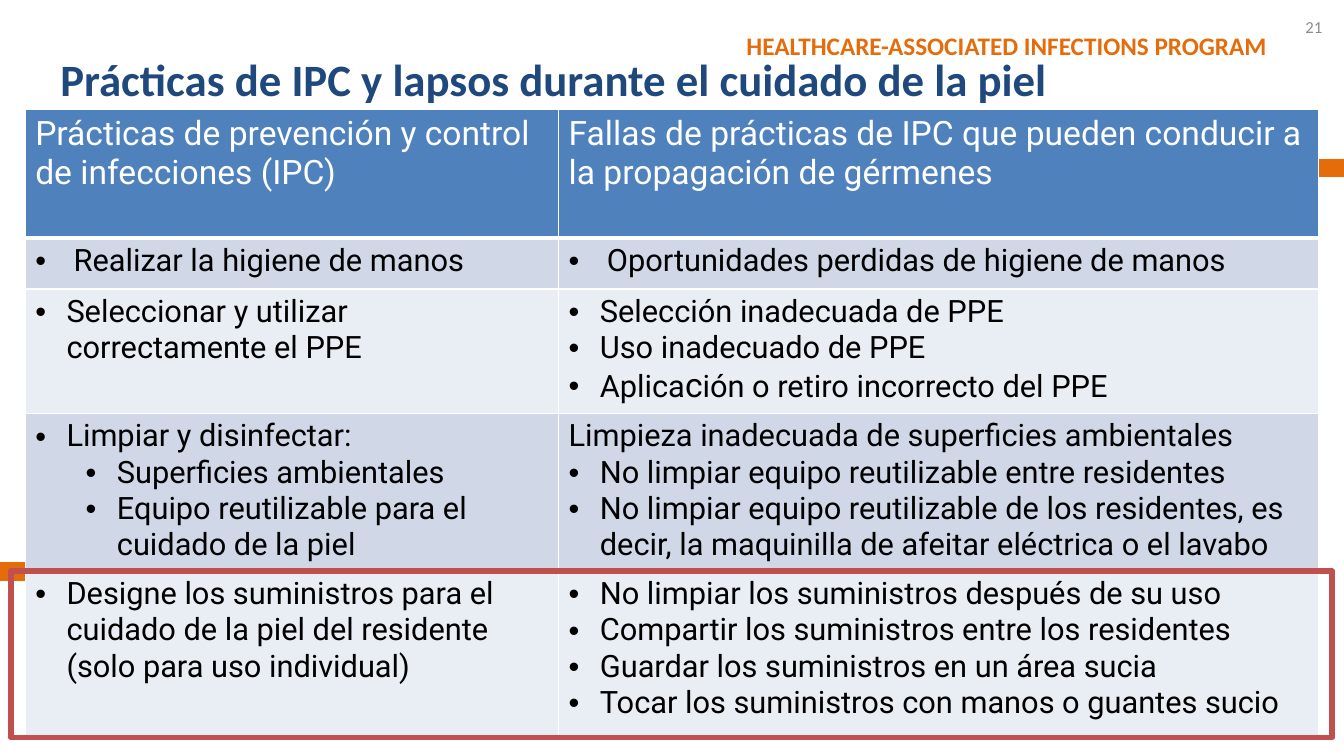
from lxml.etree import SubElement
from pptx import Presentation
from pptx.dml.color import RGBColor
from pptx.enum.shapes import MSO_CONNECTOR, MSO_SHAPE
from pptx.enum.text import MSO_ANCHOR, PP_ALIGN
from pptx.oxml.ns import qn
from pptx.util import Inches, Pt

THEME = {
    "heading_font": "Calibri", "table_font": "Roboto", "bullet_font": "Arial",
    "orange": "E46C0A", "navy": "1F497D", "gray": "8C8C8C", "red": "C0504D",
    "white": "FFFFFF", "black": "000000",
    "header_fill": "4F81BD", "bands": ("D0D8E8", "E9EDF4"),
    "title": 32, "program": 18, "number": 12, "header": 24, "body": 22,
    "bar": 13.5, "frame": 4, "border": 1, "header_border": 3,
}

presentation = Presentation()
presentation.slide_width, presentation.slide_height = Inches(13.33), Inches(7.5)
slide = presentation.slides.add_slide(presentation.slide_layouts[6])
COLUMN = presentation.slide_width / 160
ROW = presentation.slide_height / 90


def place(left, top, width, height):
    return [int(left * COLUMN), int(top * ROW), int(width * COLUMN), int(height * ROW)]


def add_run(paragraph, text, font, size, color, bold=False):
    run = paragraph.add_run()
    run.text = text
    run.font.name, run.font.size, run.font.bold = font, Pt(size), bold
    run.font.color.rgb = RGBColor.from_string(color)


for start, end, row in [(16, 0, 68), (160, 136, 20)]:
    bar = slide.shapes.add_connector(
        MSO_CONNECTOR.STRAIGHT,
        int(start * COLUMN), int(row * ROW), int(end * COLUMN), int(row * ROW))
    bar.line.color.rgb = RGBColor.from_string(THEME["orange"])
    bar.line.width = Pt(THEME["bar"])
    SubElement(bar._element.spPr, qn("a:effectLst"))

LABELS = [
    ("HEALTHCARE-ASSOCIATED INFECTIONS PROGRAM", (64, 3, 88, 5),
     "program", "orange", True, PP_ALIGN.RIGHT, MSO_ANCHOR.TOP),
    ("21", (149.3, 0.8, 9.3, 4.8),
     "number", "gray", False, PP_ALIGN.RIGHT, MSO_ANCHOR.MIDDLE),
    ("Prácticas de IPC y lapsos durante el cuidado de la piel", (6, 3.6, 129, 11.4),
     "title", "navy", True, PP_ALIGN.LEFT, MSO_ANCHOR.MIDDLE),
]
for text, area, size, color, bold, alignment, anchor in LABELS:
    frame = slide.shapes.add_textbox(*place(*area)).text_frame
    frame.word_wrap = True
    frame.vertical_anchor = anchor
    paragraph = frame.paragraphs[0]
    paragraph.alignment = alignment
    add_run(paragraph, text, THEME["heading_font"], THEME[size], THEME[color], bold)

INDENTS = {"wide": (0.38, 0.38, 0), "item": (0.31, 0.31, 0), "sub": (0.81, 0.31, 1)}
CONTENT = [
    [[("plain", "Prácticas de prevención y control de infecciones (IPC)")],
     [("plain", "Fallas de prácticas de IPC que pueden conducir a la propagación de gérmenes")]],
    [[("wide", "Realizar la higiene de manos")],
     [("wide", "Oportunidades perdidas de higiene de manos")]],
    [[("item", "Seleccionar y utilizar correctamente el PPE")],
     [("item", "Selección inadecuada de PPE"),
      ("item", "Uso inadecuado de PPE"),
      ("item", "Aplica", "c", "ión o retiro incorrecto del PPE")]],
    [[("item", "Limpiar y disinfectar:"),
      ("sub", "Superficies ambientales"),
      ("sub", "Equipo reutilizable para el cuidado de la piel")],
     [("plain", "Limpieza inadecuada de superficies ambientales"),
      ("item", "No limpiar equipo reutilizable entre residentes"),
      ("item", "No limpiar equipo reutilizable de los residentes, es decir, "
               "la maquinilla de afeitar eléctrica o el lavabo")]],
    [[("item", "Designe los suministros para el cuidado de la piel del residente "
               "(solo para uso individual)")],
     [("item", "No limpiar los suministros después de su uso"),
      ("item", "Compartir los suministros entre los residentes"),
      ("item", "Guardar los suministros en un área sucia"),
      ("item", "Tocar los suministros con manos o guantes sucio")]],
]
COLUMN_WIDTHS = [63.5, 90.5]
ROW_HEIGHTS = [15.3, 6.1, 14.4, 18.4, 19.8]

table = slide.shapes.add_table(
    len(ROW_HEIGHTS), len(COLUMN_WIDTHS),
    *place(3, 13, sum(COLUMN_WIDTHS), sum(ROW_HEIGHTS))).table
table.horz_banding = False
for column, width in zip(table.columns, COLUMN_WIDTHS):
    column.width = int(width * COLUMN)
for row, height in zip(table.rows, ROW_HEIGHTS):
    row.height = int(height * ROW)

for row_index, cells in enumerate(CONTENT):
    is_header = row_index == 0
    fill = THEME["header_fill"] if is_header else THEME["bands"][(row_index - 1) % 2]
    color = THEME["white"] if is_header else THEME["black"]
    size = THEME["header"] if is_header else THEME["body"]
    for column_index, paragraphs in enumerate(cells):
        cell = table.cell(row_index, column_index)
        properties = cell._tc.get_or_add_tcPr()
        for side in ("lnL", "lnR", "lnT", "lnB"):
            weight = THEME["header_border" if is_header and side == "lnB" else "border"]
            border = SubElement(properties, qn(f"a:{side}"), w=str(Pt(weight)))
            SubElement(SubElement(border, qn("a:solidFill")),
                       qn("a:srgbClr"), val=THEME["white"])
        cell.fill.solid()
        cell.fill.fore_color.rgb = RGBColor.from_string(fill)
        frame = cell.text_frame
        for index, (kind, *runs) in enumerate(paragraphs):
            paragraph = frame.add_paragraph() if index else frame.paragraphs[0]
            if kind in INDENTS:
                margin, hanging, paragraph.level = INDENTS[kind]
                bullet = paragraph._p.get_or_add_pPr()
                bullet.set("marL", str(Inches(margin)))
                bullet.set("indent", str(-Inches(hanging)))
                SubElement(bullet, qn("a:buFont"), typeface=THEME["bullet_font"])
                SubElement(bullet, qn("a:buChar"), char="•")
            for text in runs:
                run_size = THEME["header"] if text == "c" else size
                add_run(paragraph, text, THEME["table_font"], run_size, color)

highlight = slide.shapes.add_shape(MSO_SHAPE.RECTANGLE, *place(1.3, 68, 157.3, 19.8))
highlight.shadow.inherit = False
highlight.fill.background()
highlight.line.color.rgb = RGBColor.from_string(THEME["red"])
highlight.line.width = Pt(THEME["frame"])

presentation.save("out.pptx")
